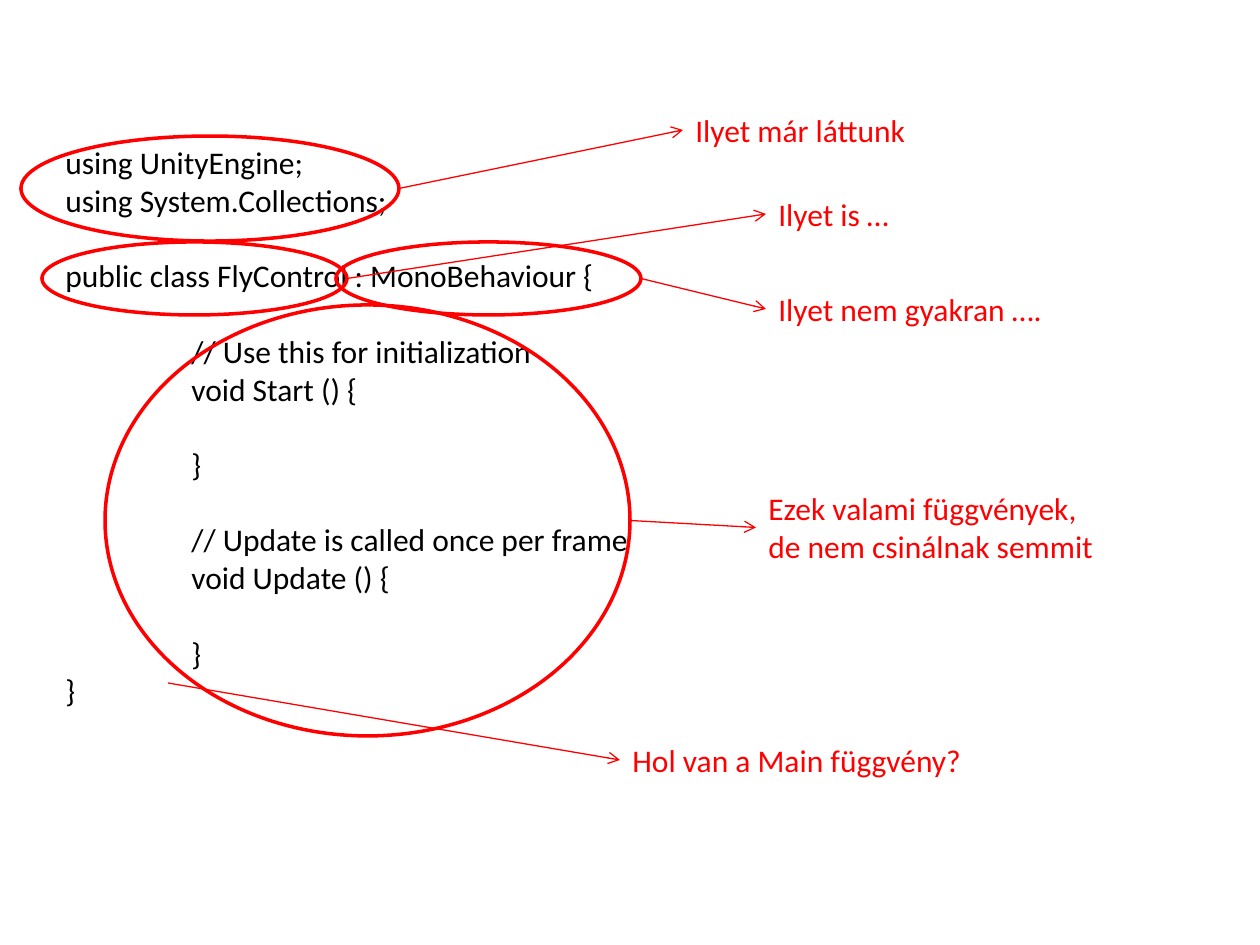
from dataclasses import dataclass

from lxml.etree import SubElement
from pptx import Presentation
from pptx.dml.color import RGBColor
from pptx.enum.shapes import MSO_CONNECTOR as CONNECTOR, MSO_SHAPE as SHAPE
from pptx.enum.text import MSO_AUTO_SIZE as AUTO_SIZE
from pptx.oxml.ns import qn
from pptx.util import Pt

PX = 914400 // 126  # EMU per pixel


@dataclass(frozen=True)
class Theme:
    """Colours, type and line widths of the slide."""
    font: str = "Calibri"
    size: Pt = Pt(18)
    blank_line: Pt = Pt(21.5)
    code: RGBColor = RGBColor(0, 0, 0)
    accent: RGBColor = RGBColor(255, 0, 0)
    ring_width: Pt = Pt(2)
    arrow_width: Pt = Pt(0.75)


THEME = Theme()

CODE_TAB = 126
CODE_BOX = (53, 137, 1144, 585)
# Each block is set one blank line below the block before it.
CODE_BLOCKS = [
    ["using UnityEngine;", "using System.Collections;"],
    ["public class FlyControl : MonoBehaviour {"],
    ["\t// Use this for initialization", "\tvoid Start () {"],
    ["\t}"],
    ["\t// Update is called once per frame", "\tvoid Update () {"],
    ["\t}", "}"],
]

# Remark lines, remark box, ring around the code, arrow start if there is no ring
REMARKS = [
    (["Ilyet már láttunk"], (683, 105, 238, 50), (21, 136, 378, 105), None),
    (["Ilyet is …"], (766, 189, 139, 50), (42, 242, 305, 73), None),
    (["Ilyet nem gyakran …."], (766, 284, 292, 50), (336, 242, 305, 73), None),
    (["Ezek valami függvények,", "de nem csinálnak semmit"],
     (756, 483, 354, 89), (105, 305, 525, 431), None),
    (["Hol van a Main függvény?"], (620, 735, 358, 50), None, (168, 683)),
]


def emu(lengths):
    """Turn pixel lengths into EMU."""
    return [round(length * PX) for length in lengths]


def set_tab(line, position):
    """Give a paragraph one left tab stop."""
    stops = SubElement(line._p.get_or_add_pPr(), qn("a:tabLst"))
    SubElement(stops, qn("a:tab"), pos=str(position * PX), algn="l")


def add_text(slide, box, blocks, color, wrap):
    """Add a text box of line blocks parted by one line of space."""
    frame = slide.shapes.add_textbox(*emu(box)).text_frame
    frame.word_wrap = wrap
    frame.auto_size = AUTO_SIZE.SHAPE_TO_FIT_TEXT
    lines = [(text, block > 0 and row == 0)
             for block, texts in enumerate(blocks)
             for row, text in enumerate(texts)]
    for number, (text, opens_block) in enumerate(lines):
        line = frame.add_paragraph() if number else frame.paragraphs[0]
        line.text = text
        if text.startswith("\t"):
            set_tab(line, CODE_TAB)
        line.font.name, line.font.size = THEME.font, THEME.size
        line.font.color.rgb = color
        if opens_block:
            line.space_before = THEME.blank_line


def add_ring(slide, box):
    """Add an unfilled ellipse around a piece of code."""
    ring = slide.shapes.add_shape(SHAPE.OVAL, *emu(box))
    ring.shadow.inherit = False
    ring.fill.background()
    ring.line.color.rgb = THEME.accent
    ring.line.width = THEME.ring_width


def add_arrow(slide, start, end):
    """Add a thin line with an open arrowhead at its end."""
    arrow = slide.shapes.add_connector(CONNECTOR.STRAIGHT, *emu(start + end))
    arrow.line.color.rgb = THEME.accent
    arrow.line.width = THEME.arrow_width
    SubElement(arrow.line._get_or_add_ln(), qn("a:tailEnd"), type="arrow")
    SubElement(arrow._element.spPr, qn("a:effectLst"))


def left_middle(box):
    """Return the middle of a box's left side."""
    left, top, _, height = box
    return left, top + height / 2


def right_middle(box):
    """Return the middle of a box's right side."""
    left, top, width, height = box
    return left + width, top + height / 2


def build():
    """Build and save the slide."""
    deck = Presentation()
    deck.slide_width, deck.slide_height = emu((1260, 945))
    slide = deck.slides.add_slide(deck.slide_layouts[6])
    add_text(slide, CODE_BOX, CODE_BLOCKS, THEME.code, wrap=True)
    for remark, box, ring, start in REMARKS:
        if ring:
            add_ring(slide, ring)
            start = right_middle(ring)
        add_text(slide, box, [remark], THEME.accent, wrap=False)
        add_arrow(slide, start, left_middle(box))
    deck.save("out.pptx")


build()
